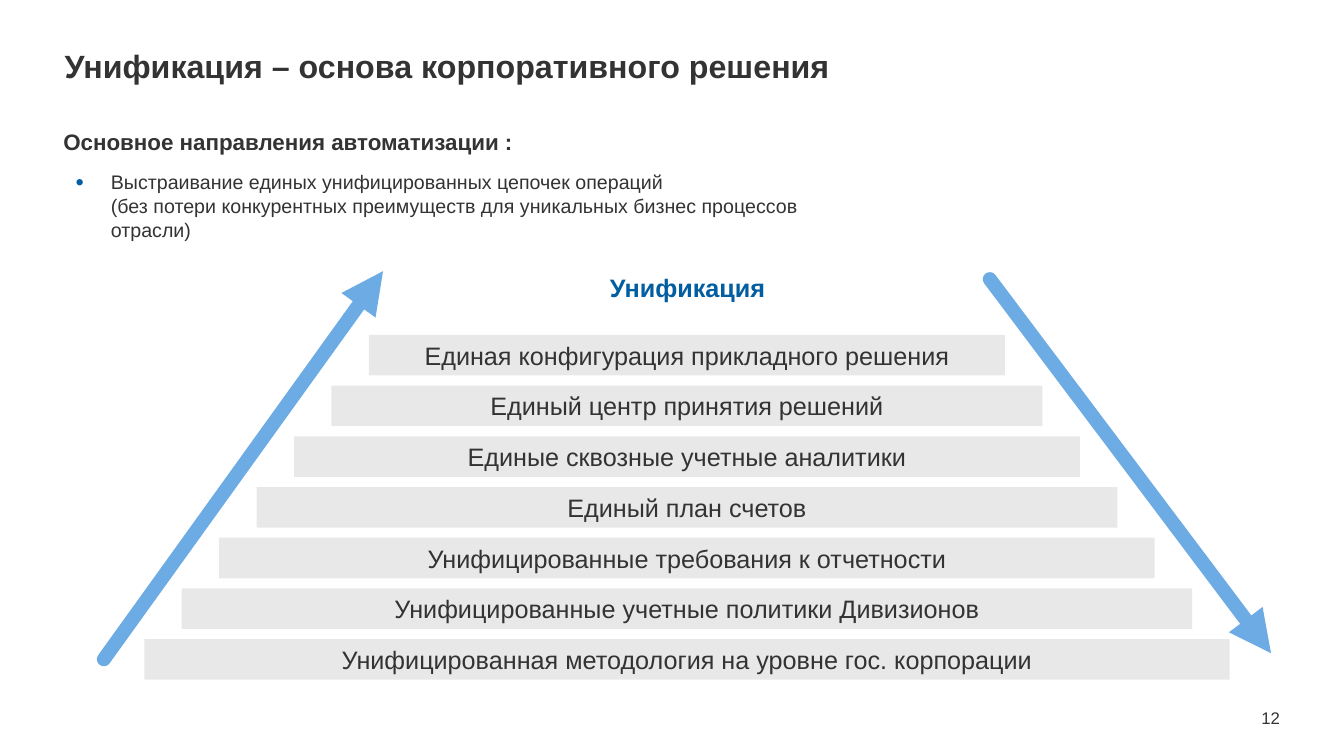
from lxml import etree
from pptx import Presentation
from pptx.dml.color import RGBColor
from pptx.enum.shapes import MSO_CONNECTOR, MSO_SHAPE
from pptx.enum.text import MSO_ANCHOR, MSO_AUTO_SIZE, PP_ALIGN
from pptx.oxml.ns import qn
from pptx.util import Pt

STRAIGHT = MSO_CONNECTOR.STRAIGHT
RECT = MSO_SHAPE.RECTANGLE
TOP, MIDDLE, BOTTOM = MSO_ANCHOR.TOP, MSO_ANCHOR.MIDDLE, MSO_ANCHOR.BOTTOM
LEFT, CENTER, RIGHT = PP_ALIGN.LEFT, PP_ALIGN.CENTER, PP_ALIGN.RIGHT

FONT = "Arial"
COLORS = {
    "text": "333333",
    "accent": "025EA1",
    "bullet": "035FA2",
    "bar": "D9D9D9",
    "arrow": "6CABE3",
}

LEVELS = [
    "Единая конфигурация прикладного решения",
    "Единый центр принятия решений",
    "Единые сквозные учетные аналитики",
    "Единый план счетов",
    "Унифицированные требования к отчетности",
    "Унифицированные учетные политики Дивизионов",
    "Унифицированная методология на уровне гос. корпорации",
]
PYRAMID_CENTER, PYRAMID_TOP = 490.7, 239.2
TOP_WIDTH, WIDTH_STEP = 454.3, 53.5
BAR_HEIGHT, BAR_PITCH = 29, 36.22


def rgb(name):
    return RGBColor.from_string(COLORS[name])


def place(sp, left, top, width, height):
    sp.left, sp.top, sp.width, sp.height = Pt(left), Pt(top), Pt(width), Pt(height)


def write(sp, lines, size, color="text", bold=False, align=LEFT, anchor=TOP):
    """Fill a shape with one paragraph, its lines parted by line breaks."""
    tf = sp.text_frame
    tf.word_wrap = True
    tf.auto_size = MSO_AUTO_SIZE.NONE
    tf.vertical_anchor = anchor
    p = tf.paragraphs[0]
    p.alignment = align
    p.space_before = Pt(0)
    for i, line in enumerate(lines):
        if i:
            p.add_line_break()
        r = p.add_run()
        r.text = line
        r.font.name = FONT
        r.font.size = Pt(size)
        r.font.bold = bold
        r.font.color.rgb = rgb(color)
    return p


def set_insets(sp, left, top, right, bottom):
    tf = sp.text_frame
    tf.margin_left, tf.margin_top = Pt(left), Pt(top)
    tf.margin_right, tf.margin_bottom = Pt(right), Pt(bottom)


def add_label(slide, box, text, size, **style):
    sp = slide.shapes.add_textbox(*map(Pt, box))
    write(sp, [text], size, **style)
    return sp


def set_bullet(p, indent):
    pPr = p._p.get_or_add_pPr()
    pPr.set("marL", str(Pt(indent)))
    pPr.set("indent", str(-Pt(indent)))
    color = etree.SubElement(pPr, qn("a:buClr"))
    etree.SubElement(color, qn("a:srgbClr"), val=COLORS["bullet"])
    etree.SubElement(pPr, qn("a:buSzPct"), val="120000")
    etree.SubElement(pPr, qn("a:buFont"), typeface=FONT)
    etree.SubElement(pPr, qn("a:buChar"), char="•")


def add_bar(slide, level, text):
    width = TOP_WIDTH + level * WIDTH_STEP
    left = PYRAMID_CENTER - width / 2
    top = PYRAMID_TOP + level * BAR_PITCH
    sp = slide.shapes.add_shape(RECT, Pt(left), Pt(top), Pt(width), Pt(BAR_HEIGHT))
    sp.shadow.inherit = False
    sp.line.fill.background()
    sp.fill.solid()
    sp.fill.fore_color.rgb = rgb("bar")
    fill_color = sp._element.spPr.find(qn("a:solidFill")).find(qn("a:srgbClr"))
    etree.SubElement(fill_color, qn("a:alpha"), val="58000")
    write(sp, [text], 18, align=CENTER, anchor=MIDDLE)


def add_arrow(slide, tail, tip):
    """Draw a thick round-capped line with its arrowhead at the tip."""
    arrow = slide.shapes.add_connector(STRAIGHT, *map(Pt, tail + tip))
    arrow.line.color.rgb = rgb("arrow")
    arrow.line.width = Pt(10)
    ln = arrow.line._get_or_add_ln()
    ln.set("cap", "rnd")
    etree.SubElement(ln, qn("a:tailEnd"), type="triangle")
    etree.SubElement(arrow._element.spPr, qn("a:effectLst"))


def main():
    prs = Presentation()
    prs.slide_width, prs.slide_height = Pt(960), Pt(540)
    slide = prs.slides.add_slide(prs.slide_layouts[1])

    title = slide.shapes.title
    place(title, 46.1, 23, 646.6, 51.1)
    set_insets(title, 0, 0, 0, 2.9)
    write(title, ["Унификация – основа корпоративного решения"], 23,
          bold=True, anchor=MIDDLE)

    add_label(slide, (38.2, 87.8, 921.6, 26.6),
              "Основное направления автоматизации :", 16, bold=True)

    directions = slide.placeholders[1]
    place(directions, 46.8, 118.1, 537.1, 58.3)
    p = write(directions, [
        "Выстраивание единых унифицированных цепочек операций",
        "(без потери конкурентных преимуществ для уникальных бизнес процессов отрасли)",
    ], 14)
    set_bullet(p, 25.2)

    add_label(slide, (398.2, 190.8, 185.8, 29), "Унификация", 18,
              color="accent", bold=True, align=CENTER)
    for level, text in enumerate(LEVELS):
        add_bar(slide, level, text)
    add_arrow(slide, (74.2, 470.9), (273.6, 193.7))
    add_arrow(slide, (707, 199.4), (907.9, 466.6))

    number = add_label(slide, (878.4, 502.6, 36, 17.3), "12", 12,
                       align=RIGHT, anchor=BOTTOM)
    set_insets(number, 0, 0, 0, 0)

    prs.save("out.pptx")


if __name__ == "__main__":
    main()
